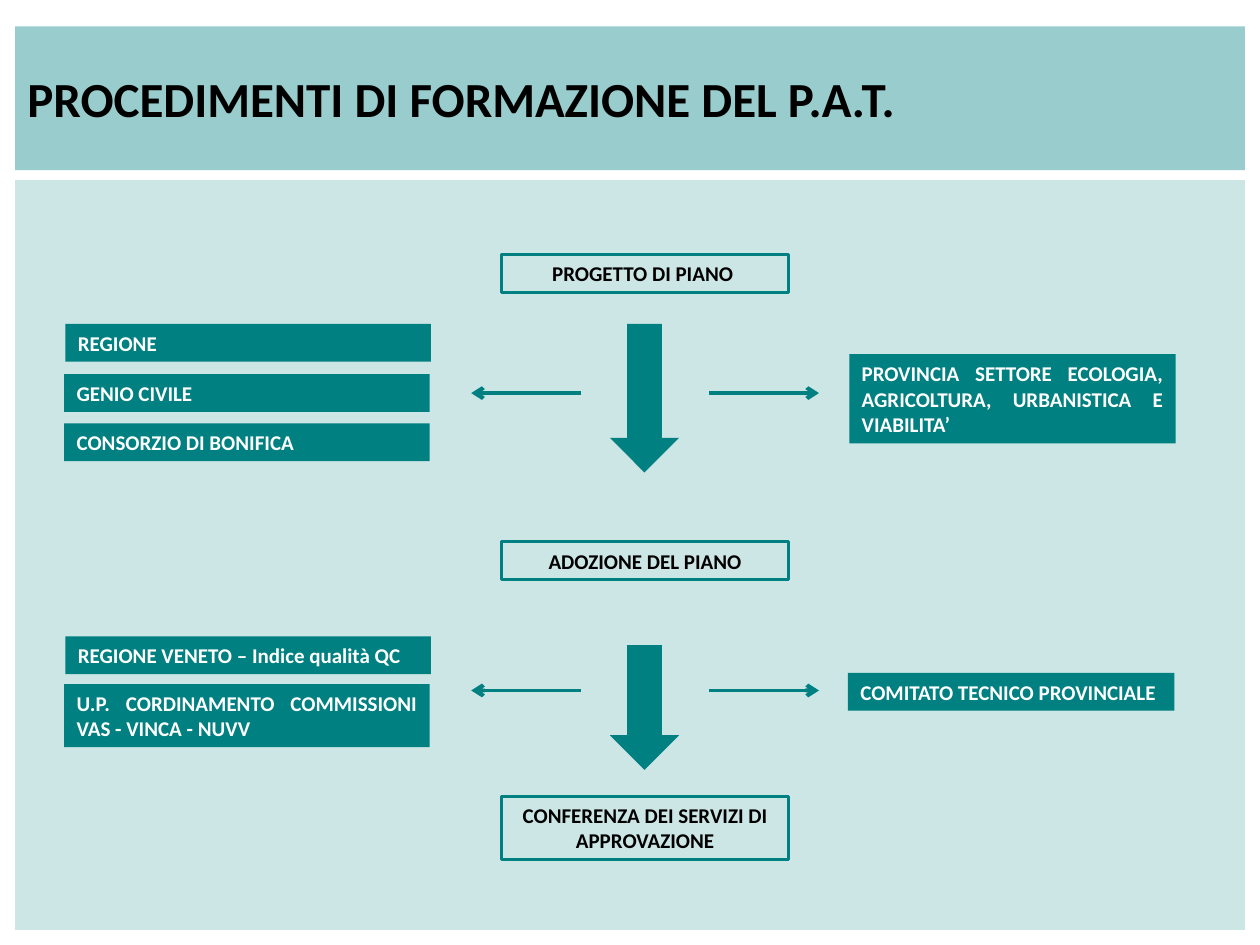
from dataclasses import dataclass

import pptx
import pptx.dml.color
import pptx.enum.shapes
import pptx.enum.text
import pptx.oxml.ns
import pptx.util
from lxml import etree
from pptx.util import Inches

RGB = pptx.dml.color.RGBColor
SHAPE = pptx.enum.shapes.MSO_SHAPE
ALIGN = pptx.enum.text.PP_ALIGN
qn = pptx.oxml.ns.qn


@dataclass(frozen=True)
class Theme:
    teal: RGB = RGB(0, 128, 128)
    black: RGB = RGB(0, 0, 0)
    white: RGB = RGB(255, 255, 255)
    font: str = "Calibri"
    title_size: int = 28
    label_size: int = 12
    outline: float = 1.5
    arrow_line: float = 2.25


theme = Theme()
presentation = pptx.Presentation()
presentation.slide_width = Inches(10)
presentation.slide_height = Inches(7.5)
slide = presentation.slides.add_slide(presentation.slide_layouts[6])


def add_block(kind, left, top, width, height, opacity=100):
    """Add a teal shape without outline; an opacity of 0 leaves it unfilled."""
    shape = slide.shapes.add_shape(
        kind, Inches(left), Inches(top), Inches(width), Inches(height))
    shape.shadow.inherit = False
    shape.line.fill.background()
    if opacity == 0:
        shape.fill.background()
        return shape
    shape.fill.solid()
    shape.fill.fore_color.rgb = theme.teal
    if opacity < 100:
        color = shape.fill._xPr.find(".//" + qn("a:srgbClr"))
        etree.SubElement(color, qn("a:alpha"), val=str(opacity * 1000))
    return shape


def write(shape, text, size, color, alignment):
    frame = shape.text_frame
    frame.word_wrap = True
    frame.text = text
    paragraph = frame.paragraphs[0]
    paragraph.alignment = alignment
    font = paragraph.runs[0].font
    font.name = theme.font
    font.size = pptx.util.Pt(size)
    font.bold = True
    font.color.rgb = color


# Title band and content panel
title = add_block(SHAPE.RECTANGLE, 0.12, 0.21, 9.76, 1.14, opacity=40)
title.text_frame.vertical_anchor = pptx.enum.text.MSO_ANCHOR.MIDDLE
write(title, "PROCEDIMENTI DI FORMAZIONE DEL P.A.T.",
      theme.title_size, theme.black, ALIGN.LEFT)
add_block(SHAPE.RECTANGLE, 0.12, 1.43, 9.76, 5.95, opacity=20)

# Bodies involved in each phase: left, top, width, height, text
bodies = [
    (0.52, 2.57, 2.9, 0.3, "REGIONE"),
    (0.51, 2.97, 2.9, 0.3, "GENIO CIVILE"),
    (0.51, 3.36, 2.9, 0.3, "CONSORZIO DI BONIFICA"),
    (0.52, 5.05, 2.9, 0.3, "REGIONE VENETO – Indice qualità QC"),
    (0.51, 5.43, 2.9, 0.5, "U.P. CORDINAMENTO COMMISSIONI VAS - VINCA - NUVV"),
    (6.74, 2.81, 2.59, 0.71,
     "PROVINCIA SETTORE ECOLOGIA, AGRICOLTURA, URBANISTICA E VIABILITA’ "),
    (6.73, 5.34, 2.59, 0.3, "COMITATO TECNICO PROVINCIALE"),
]
for left, top, width, height, text in bodies:
    body = add_block(SHAPE.RECTANGLE, left, top, width, height)
    write(body, text, theme.label_size, theme.white, ALIGN.JUSTIFY)

# Steps of the plan, down the middle
steps = [
    (2.02, 0.3, "PROGETTO DI PIANO "),
    (4.3, 0.3, "ADOZIONE DEL PIANO"),
    (6.32, 0.5, "CONFERENZA DEI SERVIZI DI APPROVAZIONE"),
]
for top, height, text in steps:
    step = add_block(SHAPE.RECTANGLE, 3.98, top, 2.28, height, opacity=0)
    step.line.color.rgb = theme.teal
    step.line.width = pptx.util.Pt(theme.outline)
    write(step, text, theme.label_size, theme.black, ALIGN.CENTER)

for top, height in [(2.57, 1.18), (5.12, 0.99)]:
    add_block(SHAPE.DOWN_ARROW, 4.84, top, 0.55, height)

# Side arrows pointing from each phase to the bodies
for y in (3.12, 5.48):
    for start, end in [(4.61, 3.74), (5.63, 6.5)]:
        arrow = slide.shapes.add_connector(
            pptx.enum.shapes.MSO_CONNECTOR.STRAIGHT,
            Inches(start), Inches(y), Inches(end), Inches(y))
        arrow.line.color.rgb = theme.teal
        arrow.line.width = pptx.util.Pt(theme.arrow_line)
        etree.SubElement(arrow.line._get_or_add_ln(), qn("a:tailEnd"), type="arrow")
        etree.SubElement(arrow._element.spPr, qn("a:effectLst"))

presentation.save("out.pptx")
